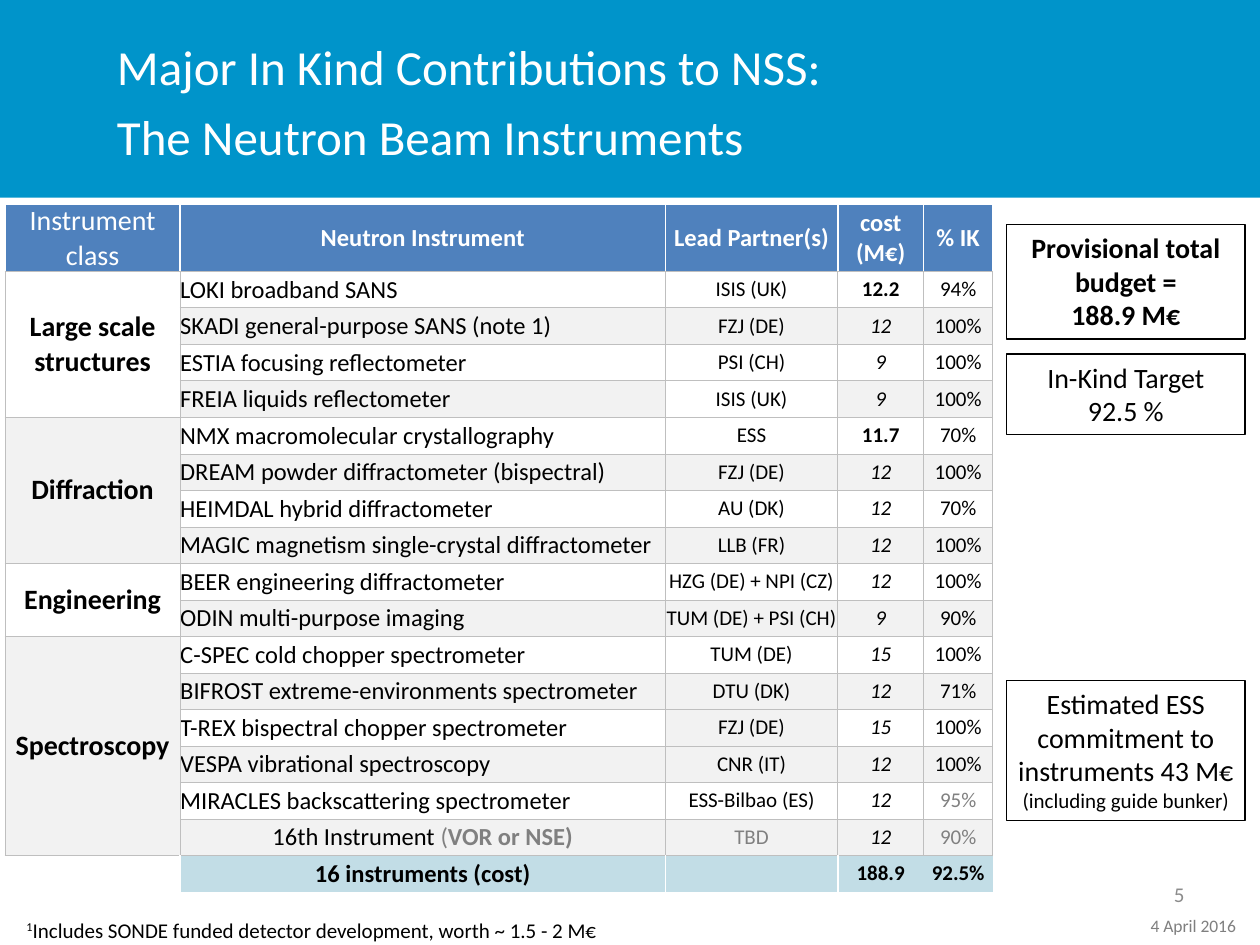
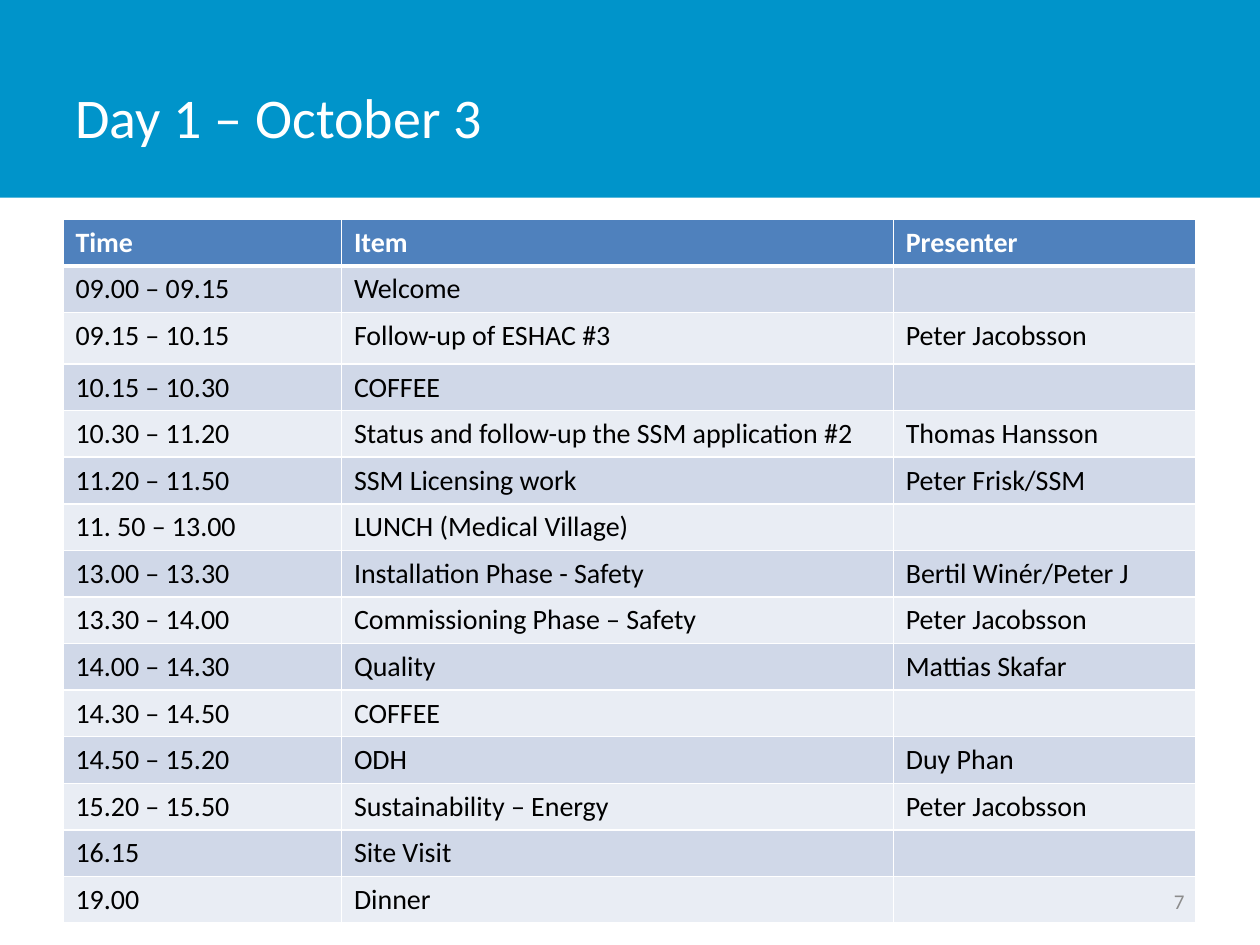
import dataclasses
import pptx
import pptx.dml.color
import pptx.enum.shapes
import pptx.enum.text
import pptx.oxml.ns
import pptx.util
from lxml import etree

Inches = pptx.util.Inches
Pt = pptx.util.Pt
ALIGN = pptx.enum.text.PP_ALIGN
ANCHOR = pptx.enum.text.MSO_ANCHOR
qn = pptx.oxml.ns.qn


@dataclasses.dataclass(frozen=True)
class Theme:
    font: str = "Calibri"
    band: str = "0094CA"
    header: str = "4F81BD"
    white: str = "FFFFFF"
    black: str = "000000"
    stripe: str = "F2F2F2"
    total: str = "C2DDE6"
    grid: str = "BFBFBF"
    pending: str = "808080"
    date: str = "7F7F7F"
    page: str = "8C8C8C"
    agenda_dark: str = "D0D8E8"
    agenda_light: str = "E9EDF4"
    title_large: int = 32
    title: int = 28
    body: int = 16
    instrument: int = 14
    small: int = 12
    tiny: int = 10


THEME = Theme()


@dataclasses.dataclass(frozen=True)
class Words:
    text: str
    size: int = THEME.body
    color: str = THEME.black
    bold: bool = False
    italic: bool = False
    raised: bool = False


INSTRUMENT_HEADINGS = [("Instrument class", THEME.body), ("Neutron Instrument", THEME.instrument),
                       ("Lead Partner(s)", THEME.instrument), ("cost (M€)", THEME.instrument),
                       ("% IK", THEME.instrument)]

INSTRUMENT_CLASSES = [
    ("Large scale structures", [
        ("LOKI broadband SANS", "ISIS (UK)", "12.2", "94%"),
        ("SKADI general-purpose SANS (note 1)", "FZJ (DE)", "12", "100%"),
        ("ESTIA focusing reflectometer", "PSI (CH)", "9", "100%"),
        ("FREIA liquids reflectometer", "ISIS (UK)", "9", "100%")]),
    ("Diffraction", [
        ("NMX macromolecular crystallography", "ESS", "11.7", "70%"),
        ("DREAM powder diffractometer (bispectral)", "FZJ (DE)", "12", "100%"),
        ("HEIMDAL hybrid diffractometer", "AU (DK)", "12", "70%"),
        ("MAGIC magnetism single-crystal diffractometer", "LLB (FR)", "12", "100%")]),
    ("Engineering", [
        ("BEER engineering diffractometer", "HZG (DE) + NPI (CZ)", "12", "100%"),
        ("ODIN multi-purpose imaging", "TUM (DE) + PSI (CH)", "9", "90%")]),
    ("Spectroscopy", [
        ("C-SPEC cold chopper spectrometer", "TUM (DE)", "15", "100%"),
        ("BIFROST extreme-environments spectrometer", "DTU (DK)", "12", "71%"),
        ("T-REX bispectral chopper spectrometer", "FZJ (DE)", "15", "100%"),
        ("VESPA vibrational spectroscopy", "CNR (IT)", "12", "100%"),
        ("MIRACLES backscattering spectrometer", "ESS-Bilbao (ES)", "12", "95%"),
        ("16th Instrument ", "TBD", "12", "90%")]),
]
FIRM_COSTS = {"12.2", "11.7"}
PENDING_SHARES = {"MIRACLES backscattering spectrometer", "16th Instrument "}
SWAPPED_PARTNER_FILLS = {"FREIA liquids reflectometer", "T-REX bispectral chopper spectrometer"}

AGENDA = [
    ("Time", "Item", "Presenter"),
    ("09.00 – 09.15", "Welcome", ""),
    ("09.15 – 10.15", "Follow-up of ESHAC #3", "Peter Jacobsson"),
    ("10.15 – 10.30", "COFFEE", ""),
    ("10.30 – 11.20", "Status and follow-up the SSM application #2", "Thomas Hansson"),
    ("11.20 – 11.50", "SSM Licensing work", "Peter Frisk/SSM"),
    ("11. 50 – 13.00", "LUNCH (Medical Village)", ""),
    ("13.00 – 13.30", "Installation Phase - Safety", "Bertil Winér/Peter J"),
    ("13.30 – 14.00", "Commissioning Phase – Safety", "Peter Jacobsson"),
    ("14.00 – 14.30", "Quality", "Mattias Skafar"),
    ("14.30 – 14.50", "COFFEE", ""),
    ("14.50 – 15.20", "ODH", "Duy Phan"),
    ("15.20 – 15.50", "Sustainability – Energy", "Peter Jacobsson"),
    ("16.15", "Site Visit", ""),
    ("19.00", "Dinner", ""),
]


def rgb(value):
    return pptx.dml.color.RGBColor.from_string(value)


def write(frame, paragraphs, align=ALIGN.LEFT):
    for index, words_list in enumerate(paragraphs):
        paragraph = frame.paragraphs[0] if index == 0 else frame.add_paragraph()
        paragraph.alignment = align
        for words in words_list:
            run = paragraph.add_run()
            run.text = words.text
            font = run.font
            font.name, font.size = THEME.font, Pt(words.size)
            font.bold, font.italic = words.bold, words.italic
            font.color.rgb = rgb(words.color)
            if words.raised:
                run._r.get_or_add_rPr().set("baseline", "30000")


def add_text(slide, box, paragraphs, align=ALIGN.LEFT, anchor=ANCHOR.TOP):
    frame = slide.shapes.add_textbox(*map(Inches, box)).text_frame
    frame.word_wrap = True
    frame.vertical_anchor = anchor
    write(frame, paragraphs, align)
    return frame


def add_rectangle(slide, box):
    rectangle = slide.shapes.add_shape(pptx.enum.shapes.MSO_SHAPE.RECTANGLE, *map(Inches, box))
    rectangle.shadow.inherit = False
    return rectangle


def add_band(slide):
    band = add_rectangle(slide, (0, 0, 10, 1.57))
    band.fill.solid()
    band.fill.fore_color.rgb = rgb(THEME.band)
    band.line.fill.background()


def add_title(slide, box, lines, size):
    title = Words("\v".join(lines), size, THEME.white)
    frame = add_text(slide, box, [[]], anchor=ANCHOR.MIDDLE)
    paragraph = frame.paragraphs[0]
    paragraph.text = title.text
    for run in paragraph.runs:
        run.font.name, run.font.size = THEME.font, Pt(size)
        run.font.color.rgb = rgb(title.color)
    if len(lines) > 1:
        paragraph.line_spacing = Pt(40)


def add_page_number(slide, number, top):
    add_text(slide, (7.17, top, 2.33, 0.4), [[Words(number, THEME.small, THEME.page)]],
             ALIGN.RIGHT, ANCHOR.MIDDLE)


def add_callout(slide, top, height, paragraphs):
    callout = add_rectangle(slide, (7.99, top, 1.89, height))
    callout.fill.background()
    callout.line.color.rgb = rgb(THEME.black)
    callout.line.width = Pt(0.75)
    frame = callout.text_frame
    frame.word_wrap = True
    frame.vertical_anchor = ANCHOR.TOP
    frame.margin_left = frame.margin_right = Inches(0.08)
    write(frame, paragraphs, ALIGN.CENTER)


def add_grid(slide, left, top, widths, heights):
    size = Inches(sum(widths)), Inches(sum(heights))
    table = slide.shapes.add_table(len(heights), len(widths), Inches(left), Inches(top), *size).table
    for column, width in zip(table.columns, widths):
        column.width = Inches(width)
    for row, height in zip(table.rows, heights):
        row.height = Inches(height)
    return table


def set_borders(cell, **edges):
    properties = cell._tc.get_or_add_tcPr()
    for position, side in enumerate("LRTB"):
        line = etree.Element(qn("a:ln" + side))
        color, width = edges.get(side, (None, 0))
        line.set("w", str(Pt(width)))
        if color:
            fill = etree.SubElement(line, qn("a:solidFill"))
            etree.SubElement(fill, qn("a:srgbClr")).set("val", color)
        else:
            etree.SubElement(line, qn("a:noFill"))
        properties.insert(position, line)


def fill_cell(cell, words, fill, borders, align=ALIGN.LEFT, tight=False):
    if fill:
        cell.fill.solid()
        cell.fill.fore_color.rgb = rgb(fill)
    else:
        cell.fill.background()
    set_borders(cell, **borders)
    if tight:
        cell.margin_left = cell.margin_right = cell.margin_top = cell.margin_bottom = 0
        cell.vertical_anchor = ANCHOR.MIDDLE
    write(cell.text_frame, [words], align)
    if not words:
        end = etree.SubElement(cell.text_frame.paragraphs[0]._p, qn("a:endParaRPr"))
        end.set("sz", str(THEME.small * 100))


def instrument_words(name, partner, cost, share):
    pending = THEME.pending
    name_words = [Words(name, THEME.instrument)]
    if partner == "TBD":
        name_words += [Words("(", THEME.instrument, pending),
                       Words("VOR or NSE)", THEME.instrument, pending, bold=True)]
    firm = cost in FIRM_COSTS
    return [name_words,
            [Words(partner, THEME.small, pending if partner == "TBD" else THEME.black)],
            [Words(cost, THEME.small, bold=firm, italic=not firm)],
            [Words(share, THEME.small, pending if name in PENDING_SHARES else THEME.black)]]


def add_instrument_table(slide):
    grey, white = (THEME.grid, 0.5), (THEME.white, 1)
    boxed = dict.fromkeys("LRTB", grey)
    table = add_grid(slide, 0.04, 1.62, [1.39, 3.85, 1.37, 0.68, 0.55], [0.53] + [0.29] * 17)

    for column, (heading, size) in enumerate(INSTRUMENT_HEADINGS):
        words = [Words(heading, size, THEME.white, bold=column > 0)]
        fill_cell(table.cell(0, column), words, THEME.header,
                  {"L": white, "R": white, "T": white, "B": grey}, ALIGN.CENTER, True)

    fills = THEME.white, THEME.stripe
    row = 1
    for class_index, (class_name, instruments) in enumerate(INSTRUMENT_CLASSES):
        table.cell(row, 0).merge(table.cell(row + len(instruments) - 1, 0))
        fill_cell(table.cell(row, 0), [Words(class_name, bold=True)], fills[class_index % 2],
                  boxed, ALIGN.CENTER, True)
        for instrument in instruments:
            for column, words in enumerate(instrument_words(*instrument), 1):
                swapped = column == 2 and instrument[0] in SWAPPED_PARTNER_FILLS
                left_aligned = column == 1 and len(words) == 1
                fill_cell(table.cell(row, column), words, fills[(row - 1 + swapped) % 2], boxed,
                          ALIGN.LEFT if left_aligned else ALIGN.CENTER, True)
            row += 1

    totals = [[], [Words("16 instruments (cost)", THEME.instrument, bold=True)], [],
              [Words("188.9", THEME.small, bold=True)], [Words("92.5%", THEME.small, bold=True)]]
    for column, words in enumerate(totals):
        edges = {"T": grey}
        if column < 3:
            edges["R"] = white
        if column in (1, 2):
            edges["L"] = white
        fill_cell(table.cell(row, column), words, THEME.total if column else None,
                  edges, ALIGN.CENTER, True)


def add_agenda_table(slide):
    heights = [0.41 if row == 2 else 0.37 for row in range(len(AGENDA))]
    table = add_grid(slide, 0.5, 1.74, [2.21, 4.38, 2.4], heights)
    thin, thick = (THEME.white, 1), (THEME.white, 3)
    for row, entries in enumerate(AGENDA):
        heading = row == 0
        stripe = THEME.agenda_dark if row % 2 else THEME.agenda_light
        edges = {"L": thin, "R": thin, "T": thick if row == 1 else thin, "B": thick if heading else thin}
        for column, entry in enumerate(entries):
            color = THEME.white if heading else THEME.black
            words = [Words(entry, color=color, bold=heading)] if entry else []
            fill_cell(table.cell(row, column), words, THEME.header if heading else stripe, edges)


def build_instruments(slide):
    add_band(slide)
    add_title(slide, (0.83, -0.03, 7.48, 1.57),
              ["Major In Kind Contributions to NSS:", "The Neutron Beam Instruments"], THEME.title)
    add_page_number(slide, "5", 6.9)
    add_callout(slide, 1.78, 0.91, [[Words("Provisional total budget =", bold=True)],
                                    [Words("188.9 M€", bold=True)]])
    add_callout(slide, 2.81, 0.64, [[Words("In-Kind Target")], [Words("92.5 %")]])
    add_callout(slide, 5.4, 1.11, [[Words("Estimated ESS commitment to instruments 43 M€ "),
                                    Words("(including guide bunker)", THEME.small)]])
    add_text(slide, (-0.2, 7.23, 5.35, 0.3),
             [[Words("1", THEME.small, raised=True),
               Words("Includes SONDE funded detector development, worth ~ 1.5 - 2 M€", THEME.small)]],
             ALIGN.CENTER)
    add_text(slide, (8.94, 7.21, 1.06, 0.27),
             [[Words("4 April 2016", THEME.tiny, THEME.date)]], ALIGN.CENTER)
    add_instrument_table(slide)


def build_agenda(slide):
    add_band(slide)
    add_title(slide, (0.5, 0.3, 7.81, 1.25), ["Day 1 – October 3"], THEME.title_large)
    add_agenda_table(slide)
    add_page_number(slide, "7", 6.95)


def main():
    deck = pptx.Presentation()
    deck.slide_width, deck.slide_height = Inches(10), Inches(7.5)
    blank = deck.slide_layouts[6]
    for build in (build_instruments, build_agenda):
        build(deck.slides.add_slide(blank))
    deck.save("out.pptx")


if __name__ == "__main__":
    main()
